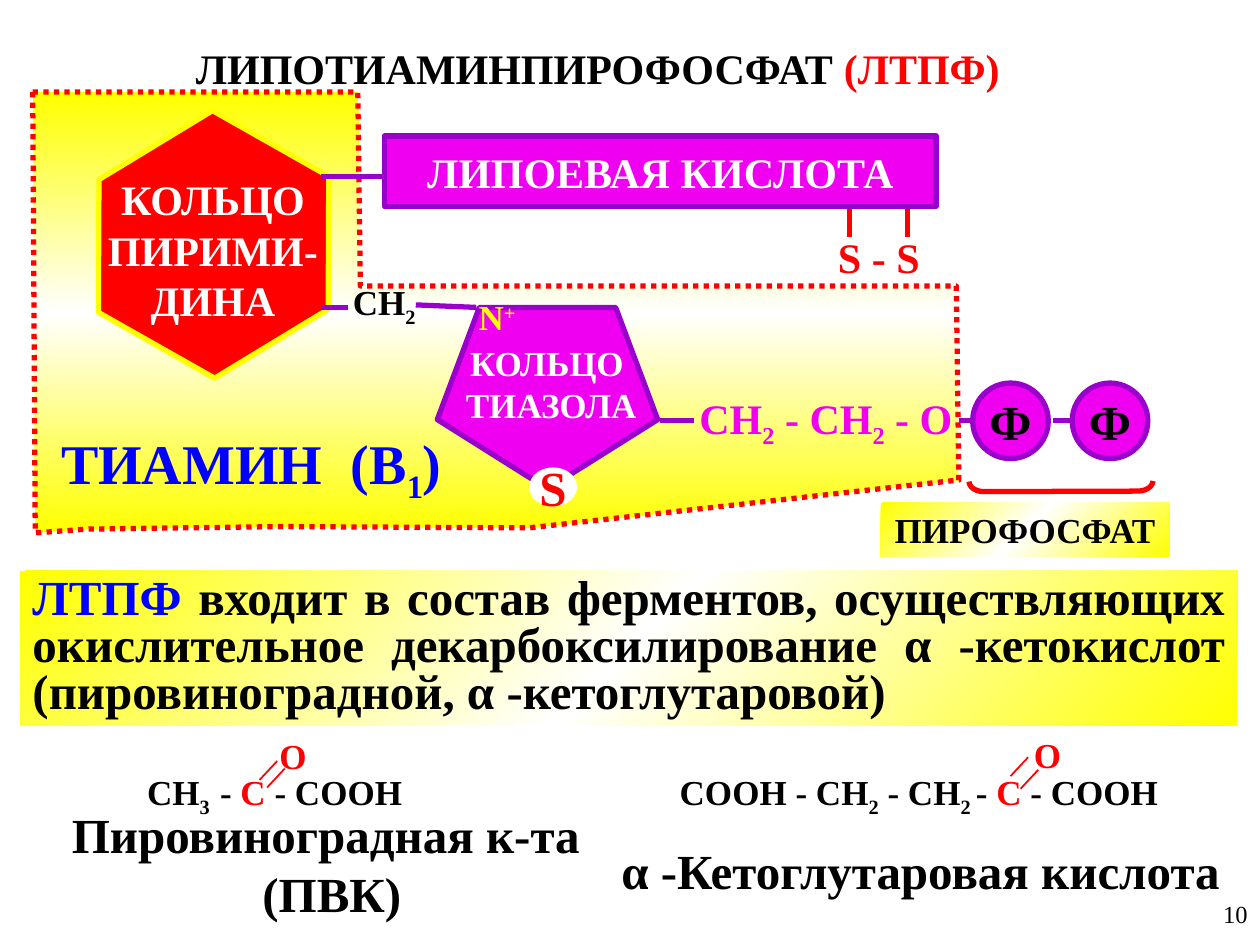
from copy import deepcopy

from lxml import etree
from pptx import Presentation
from pptx.dml.color import RGBColor
from pptx.enum.dml import MSO_LINE
from pptx.enum.shapes import MSO_CONNECTOR, MSO_SHAPE
from pptx.enum.text import MSO_ANCHOR, MSO_AUTO_SIZE, PP_ALIGN
from pptx.oxml.ns import qn
from pptx.util import Inches, Pt

LEFT, MID, RIGHT, JUST = PP_ALIGN.LEFT, PP_ALIGN.CENTER, PP_ALIGN.RIGHT, PP_ALIGN.JUSTIFY
RECT, OVAL = MSO_SHAPE.RECTANGLE, MSO_SHAPE.OVAL
FONT = "Times New Roman"
COLORS = {
    "black": "000000", "white": "FFFFFF", "red": "FF0000", "yellow": "FFFF00",
    "blue": "0000FF", "pink": "F000F0", "purple": "9900CC",
}
RGB = {name: RGBColor.from_string(code) for name, code in COLORS.items()}
SUB, SUP = -25000, 30000


def paint(shape, fill=None, line=None, angle=45):
    """Fill and outline a shape; the fill "glow" is yellow-white-yellow."""
    shape.shadow.inherit = False
    if fill == "glow":
        shape.fill.gradient()
        stops = shape._element.spPr.find(".//" + qn("a:gsLst"))
        stops.insert(1, deepcopy(stops[0]))
        for stop, place, tint in zip(shape.fill.gradient_stops, (0, 0.5, 1),
                                     ("yellow", "white", "yellow")):
            stop.position = place
            stop.color.rgb = RGB[tint]
        shape.fill.gradient_angle = 360 - angle
    elif fill:
        shape.fill.solid()
        shape.fill.fore_color.rgb = RGB[fill]
    else:
        shape.fill.background()
    if line:
        shape.line.color.rgb = RGB[line]
        shape.line.width = Pt(3)
    else:
        shape.line.fill.background()


def write(shape, size, *lines, align=MID, wrap=False, bold=True, space=None):
    """Write lines, each a list of (text, colour, optional baseline)."""
    frame = shape.text_frame
    look = {"word_wrap": wrap, "vertical_anchor": MSO_ANCHOR.MIDDLE,
            "auto_size": MSO_AUTO_SIZE.NONE,
            "margin_left": Inches(0.1), "margin_right": Inches(0.1),
            "margin_top": Inches(0.05), "margin_bottom": Inches(0.05)}
    for key, value in look.items():
        setattr(frame, key, value)
    for i, line in enumerate(lines):
        para = frame.add_paragraph() if i else frame.paragraphs[0]
        para.alignment = align
        if space:
            para.line_spacing = space
        for text, tint, *base in line:
            run = para.add_run()
            run.text = text
            for key, value in {"name": FONT, "size": Pt(size), "bold": bold}.items():
                setattr(run.font, key, value)
            run.font.color.rgb = RGB[tint]
            if base:
                run._r.get_or_add_rPr().set("baseline", str(base[0]))


deck = Presentation()
deck.slide_width, deck.slide_height = Inches(10), Inches(7.5)
slide = deck.slides.add_slide(deck.slide_layouts[5])
shapes = slide.shapes

# Title
title = shapes.title
title.left, title.top, title.width, title.height = map(Inches, (1.44, 0.29, 6.61, 0.5))
write(title, 24, [("ЛИПОТИАМИНПИРОФОСФАТ ", "black"), ("(ЛТПФ)", "red")])

# Thiamine area
edge = [(0.26, 0.73), (2.84, 0.73), (2.86, 2.27), (7.59, 2.27), (7.61, 3.81),
        (4.2, 4.19), (2.24, 4.18), (0.69, 4.2), (0.28, 4.23)]
dots = [(Inches(x), Inches(y)) for x, y in edge]
outline = shapes.build_freeform(*dots[0])
outline.add_line_segments(dots[1:], close=True)
area = outline.convert_to_shape()
paint(area, "glow", "red", angle=90)
area.line.dash_style = MSO_LINE.ROUND_DOT

# Rings and bracket
for kind, box, turn, adjust, fill, line in [
    (MSO_SHAPE.HEXAGON, (0.65, 1.02, 2.09, 1.84), 29.5, 0.28, "red", "yellow"),
    (MSO_SHAPE.REGULAR_PENTAGON, (3.47, 2.44, 1.75, 1.44), 180, None, "pink", "purple"),
    (MSO_SHAPE.RIGHT_BRACKET, (8.38, 3.13, 0.08, 1.46), 89.8, 1.49, None, "red"),
]:
    ring = shapes.add_shape(kind, *map(Inches, box))
    ring.rotation = turn
    if adjust:
        ring.adjustments[0] = adjust
    paint(ring, fill, line)

# Bonds
bonds = [(x, 1.88, x, 1.62, "red", 3) for x in (6.74, 7.2)]
bonds += [(*ends, "purple", 3) for ends in [
    (3.05, 1.4, 2.55, 1.4), (2.55, 2.44, 2.76, 2.44), (3.3, 2.42, 3.78, 2.44),
    (5.24, 3.34, 5.51, 3.34), (7.61, 3.34, 7.88, 3.34), (8.36, 3.34, 8.55, 3.34)]]
bonds += [(x, y, x + 0.14, y - 0.15, "red", 1) for x, y in [
    (2.06, 6.19), (2.12, 6.25), (8.02, 6.16), (8.1, 6.26)]]
for *ends, tint, width in bonds:
    bond = shapes.add_connector(MSO_CONNECTOR.STRAIGHT, *map(Inches, ends))
    bond.line.color.rgb = RGB[tint]
    bond.line.width = Pt(width)
    etree.SubElement(bond._element.spPr, qn("a:effectLst"))

# Filled shapes with text
for kind, box, fill, line, size, text, tint in [
    (RECT, (3.05, 1.08, 4.38, 0.56), "pink", "purple", 24, "ЛИПОЕВАЯ КИСЛОТА", "white"),
    (OVAL, (7.72, 3.04, 0.6, 0.6), "pink", "purple", 28, "Ф", "black"),
    (OVAL, (8.51, 3.04, 0.6, 0.6), "pink", "purple", 28, "Ф", "black"),
    (OVAL, (4.2, 3.71, 0.38, 0.31), "white", None, 28, "S", "red"),
    (RECT, (6.99, 3.99, 2.29, 0.43), "glow", None, 20, "ПИРОФОСФАТ", "black"),
]:
    shape = shapes.add_shape(kind, *map(Inches, box))
    paint(shape, fill, line)
    write(shape, size, [(text, tint)])

note = shapes.add_shape(RECT, *map(Inches, (0.16, 4.53, 9.66, 1.23)))
paint(note, "glow")
write(note, 28, [
    ("ЛТПФ", "blue"),
    (" входит в состав ферментов, осуществляющих окислительное "
     "декарбоксилирование α -кетокислот (пировиноградной, α -кетоглутаровой)", "black"),
], align=JUST, wrap=True, space=0.8)

# Labels and formulas
acid = [("- ", "black"), ("С", "red"), (" - СООН", "black")]
for box, size, lines, look in [
    ((6.55, 1.79, 0.85, 0.5), 24, [[("S - S", "red")]], {}),
    ((0.7, 1.33, 1.98, 1.3), 24,
     [[("КОЛЬЦО", "white")], [("ПИРИМИ-ДИНА", "white")]], {"wrap": True}),
    ((2.7, 2.2, 0.7, 0.43), 20, [[("СН", "black"), ("2", "black", SUB)]], {}),
    ((5.44, 3.09, 2.23, 0.5), 24,
     [[("СН", "pink"), ("2", "pink", SUB), (" - СН", "pink"),
       ("2", "pink", SUB), (" - О", "pink")]], {}),
    ((3.52, 2.66, 1.64, 0.77), 20,
     [[("КОЛЬЦО", "white")], [(" ТИАЗОЛА", "white")]], {}),
    ((3.57, 2.28, 0.75, 0.47), 20, [[("N", "yellow"), ("+", "yellow", SUP)]], {}),
    ((0.38, 3.39, 3.23, 0.63), 32,
     [[("ТИАМИН  (В", "blue"), ("1", "blue", SUB), (")", "blue")]], {}),
    ((1.06, 6.09, 2.24, 0.43), 20,
     [[("СН", "black"), ("3  ", "black", SUB), *acid]], {}),
    ((2.12, 5.78, 0.41, 0.43), 20, [[("О", "red")]], {}),
    ((5.28, 6.09, 4.01, 0.43), 20,
     [[("СООН - СН", "black"), ("2", "black", SUB), (" - СН", "black"),
       ("2 ", "black", SUB), *acid]], {"align": RIGHT}),
    ((8.11, 5.77, 0.41, 0.43), 20, [[("О", "red")]], {}),
    ((0.38, 6.33, 4.41, 1.05), 28,
     [[("Пировиноградная к-та", "black")], [(" (ПВК)", "black")]], {"wrap": True}),
    ((4.79, 6.62, 5.03, 0.57), 28, [[("α -Кетоглутаровая кислота", "black")]], {}),
    ((9.48, 7, 0.52, 0.5), 14, [[("10", "black")]],
     {"align": RIGHT, "wrap": True, "bold": False}),
]:
    label = shapes.add_textbox(*map(Inches, box))
    write(label, size, *lines, **look)

deck.save("out.pptx")
